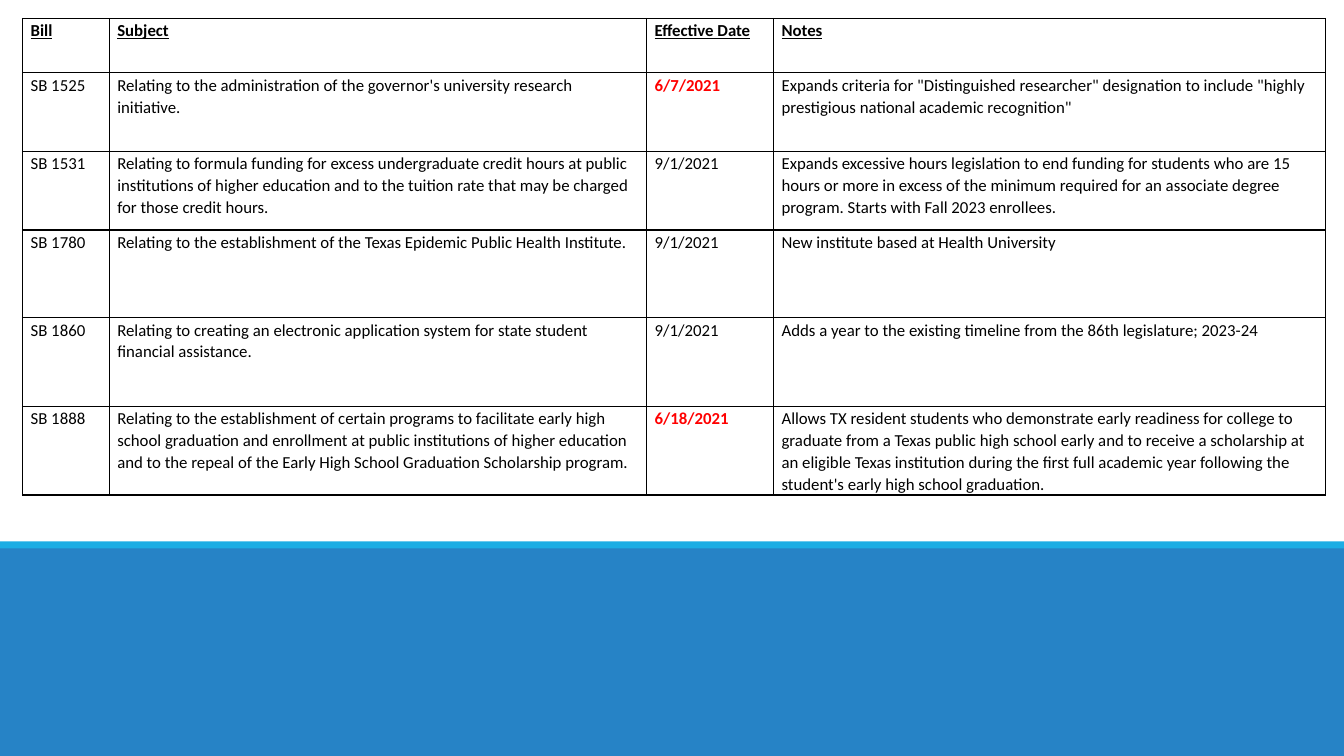
from pptx import Presentation
from pptx.dml.color import RGBColor
from pptx.enum.shapes import MSO_SHAPE as Shape
from pptx.oxml import parse_xml
from pptx.oxml.ns import nsdecls
from pptx.util import Inches, Pt

WIDTH, HEIGHT = Inches(13.33), Inches(7.5)
BLACK, RED = "000000", "FF0000"

# Table grid, in percent of the slide's width and height
LEFT, TOP = 1.68, 2.43
COLUMNS = [6.45, 39.98, 9.45, 41.04]
ROWS = [7.2, 10.4, 10.4, 11.6, 11.73, 10.53]

HEADINGS = ("Bill", "Subject", "Effective Date", "Notes")
BILLS = [
    ("SB 1525",
     "Relating to the administration of the governor's university research initiative.",
     "6/7/2021",
     'Expands criteria for "Distinguished researcher" designation to include '
     '"highly prestigious national academic recognition"'),
    ("SB 1531",
     "Relating to formula funding for excess undergraduate credit hours at public "
     "institutions of higher education and to the tuition rate that may be charged "
     "for those credit hours.",
     "9/1/2021",
     "Expands excessive hours legislation to end funding for students who are 15 hours "
     "or more in excess of the minimum required for an associate degree program. "
     "Starts with Fall 2023 enrollees."),
    ("SB 1780",
     "Relating to the establishment of the Texas Epidemic Public Health Institute.",
     "9/1/2021",
     "New institute based at Health University"),
    ("SB 1860",
     "Relating to creating an electronic application system for state student "
     "financial assistance.",
     "9/1/2021",
     "Adds a year to the existing timeline from the 86th legislature; 2023-24"),
    ("SB 1888",
     "Relating to the establishment of certain programs to facilitate early high school "
     "graduation and enrollment at public institutions of higher education and to the "
     "repeal of the Early High School Graduation Scholarship program.",
     "6/18/2021",
     "Allows TX resident students who demonstrate early readiness for college to "
     "graduate from a Texas public high school early and to receive a scholarship at an "
     "eligible Texas institution during the first full academic year following the "
     "student's early high school graduation."),
]
EARLY_DATES = {"6/7/2021", "6/18/2021"}


def color(value):
    return RGBColor.from_string(value)


def across(percent):
    return int(WIDTH * percent / 100)


def down(percent):
    return int(HEIGHT * percent / 100)


def add_band(slide, top, height, fill):
    band = slide.shapes.add_shape(Shape.RECTANGLE, 0, down(top), WIDTH, down(height))
    band.shadow.inherit = False
    band.fill.solid()
    band.fill.fore_color.rgb = color(fill)
    band.line.fill.background()


def add_borders(cell):
    properties = cell._tc.get_or_add_tcPr()
    for side in ("lnL", "lnR", "lnT", "lnB"):
        properties.append(parse_xml(
            f'<a:{side} {nsdecls("a")} w="{Pt(1)}"><a:solidFill>'
            f'<a:srgbClr val="{BLACK}"/></a:solidFill></a:{side}>'))


def fill_cell(cell, text, heading):
    early = text in EARLY_DATES
    cell.margin_left = cell.margin_right = Inches(0.08)
    cell.margin_top, cell.margin_bottom = Inches(0.01), 0
    add_borders(cell)
    cell.fill.background()
    cell.text = text
    paragraph = cell.text_frame.paragraphs[0]
    paragraph.line_spacing = 1.07
    font = paragraph.font
    font.name, font.size = "Calibri", Pt(12)
    font.bold = heading or early
    font.underline = heading
    font.color.rgb = color(RED if early else BLACK)


def add_bill_table(slide):
    bills = slide.shapes.add_table(
        len(ROWS), len(COLUMNS), across(LEFT), down(TOP),
        across(sum(COLUMNS)), down(sum(ROWS))).table
    bills.first_row = bills.horz_banding = False
    for column, share in zip(bills.columns, COLUMNS):
        column.width = across(share)
    for row, share in zip(bills.rows, ROWS):
        row.height = down(share)
    for r, entries in enumerate([HEADINGS, *BILLS]):
        for c, text in enumerate(entries):
            fill_cell(bills.cell(r, c), text, heading=r == 0)


def main():
    deck = Presentation()
    deck.slide_width, deck.slide_height = WIDTH, HEIGHT
    slide = deck.slides.add_slide(deck.slide_layouts[6])
    # Blue base with its lighter edge
    add_band(slide, 72.27, 27.73, "2683C6")
    add_band(slide, 71.6, 0.93, "1CADE4")
    # Bills and their effective dates
    add_bill_table(slide)
    deck.save("out.pptx")


if __name__ == "__main__":
    main()
